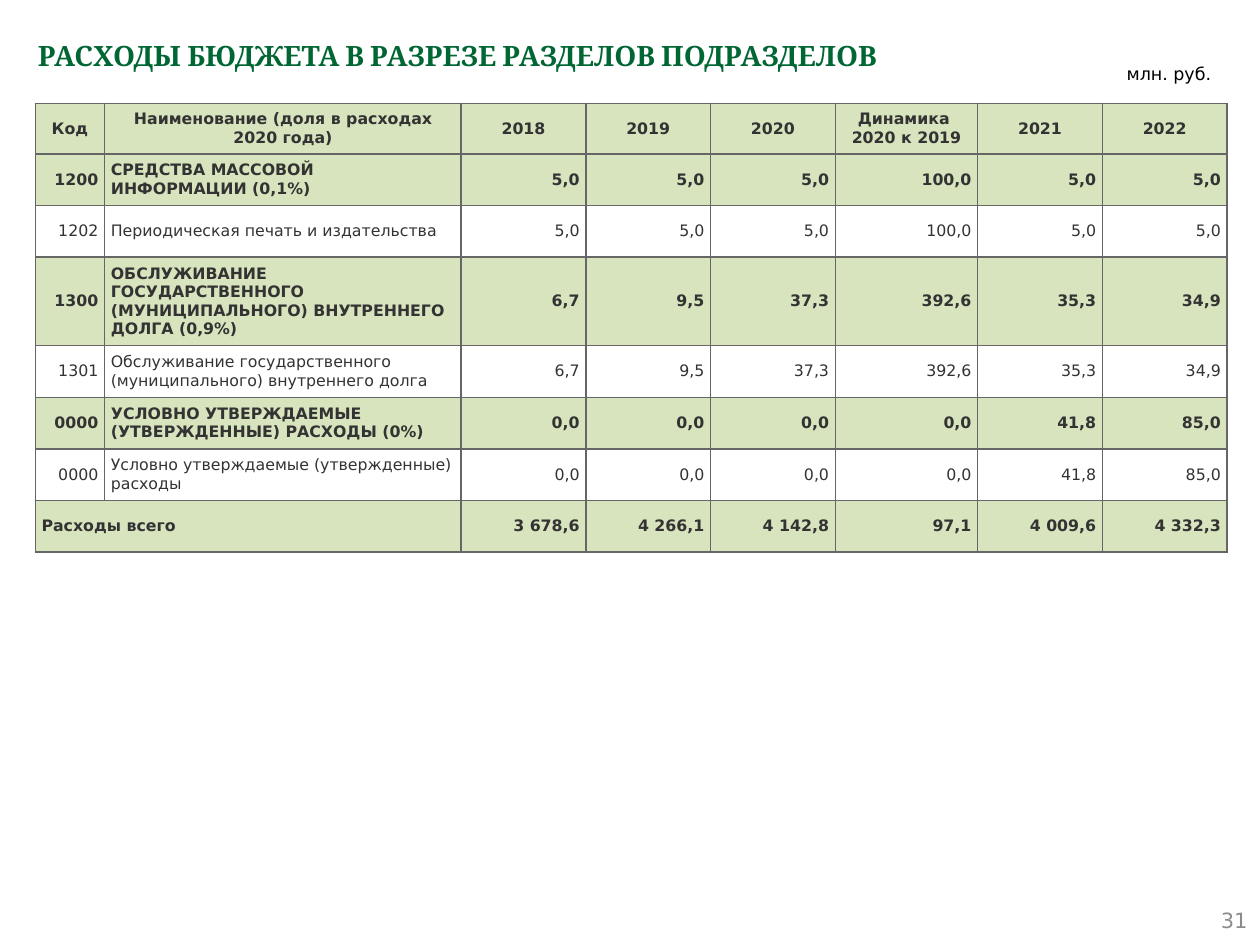
from typing import NamedTuple

from lxml.etree import SubElement
from pptx import Presentation
from pptx.dml.color import RGBColor
from pptx.enum.shapes import MSO_SHAPE
from pptx.enum.text import MSO_ANCHOR, PP_ALIGN
from pptx.oxml.ns import qn
from pptx.util import Inches, Pt

SANS = "DejaVu Sans"
GREEN, GREY = "D7E4BD", "666666"
WIDTHS = [0.55, 2.83, 0.99, 0.99, 0.99, 1.13, 0.99, 0.99]
HEAD_H, ROW_H = 0.3, 0.41


class Row(NamedTuple):
    code: str
    name: str
    values: str
    bold: bool = False


HEAD = ["Код", "Наименование (доля в расходах 2020 года)", "2018", "2019", "2020",
        "Динамика \n2020 к 2019", "2021", "2022"]
ROWS = [
    Row("1200", "СРЕДСТВА МАССОВОЙ ИНФОРМАЦИИ (0,1%)",
        "5,0|5,0|5,0|100,0|5,0|5,0", True),
    Row("1202", "Периодическая печать и издательства",
        "5,0|5,0|5,0|100,0|5,0|5,0"),
    Row("1300", "ОБСЛУЖИВАНИЕ ГОСУДАРСТВЕННОГО (МУНИЦИПАЛЬНОГО) ВНУТРЕННЕГО ДОЛГА (0,9%)",
        "6,7|9,5|37,3|392,6|35,3|34,9", True),
    Row("1301", "Обслуживание государственного (муниципального) внутреннего долга",
        "6,7|9,5|37,3|392,6|35,3|34,9"),
    Row("0000", "УСЛОВНО УТВЕРЖДАЕМЫЕ (УТВЕРЖДЕННЫЕ) РАСХОДЫ (0%)",
        "0,0|0,0|0,0|0,0|41,8|85,0", True),
    Row("0000", "Условно утверждаемые (утвержденные) расходы",
        "0,0|0,0|0,0|0,0|41,8|85,0"),
    Row("Расходы всего", "", "3 678,6|4 266,1|4 142,8|97,1|4 009,6|4 332,3", True),
]


def color(code: str) -> RGBColor:
    return RGBColor.from_string(code)


def write(frame, text: str, size: float, ink: str, align=PP_ALIGN.LEFT,
          bold: bool = False, face: str = SANS) -> None:
    frame.text = text
    for para in frame.paragraphs:
        para.alignment = align
        font = para.font
        font.name, font.size, font.bold = face, Pt(size), bold
        font.color.rgb = color(ink)


def border(cell) -> None:
    props = cell._tc.get_or_add_tcPr()
    for spot, side in enumerate(("lnL", "lnR", "lnT", "lnB")):
        line = SubElement(props, qn(f"a:{side}"), w=str(Pt(1)))
        fill = SubElement(line, qn("a:solidFill"))
        SubElement(fill, qn("a:srgbClr"), val=GREY)
        props.insert(spot, line)  # borders must come before the fill


def style(cell, text: str, align, bold: bool) -> None:
    """Fill one table cell; bold rows are shaded."""
    cell.margin_left = cell.margin_right = Inches(0.05)
    cell.margin_top = cell.margin_bottom = Inches(0.05)
    cell.vertical_anchor = MSO_ANCHOR.MIDDLE
    write(cell.text_frame, text, 9, "333333", align, bold)
    if bold:
        cell.fill.solid()
        cell.fill.fore_color.rgb = color(GREEN)
    else:
        cell.fill.background()
    border(cell)


def add_grid(slide) -> None:
    count = len(ROWS) + 1
    grid = slide.shapes.add_table(
        count, len(WIDTHS), Inches(0.28), Inches(0.82),
        Inches(sum(WIDTHS)), Inches(HEAD_H + ROW_H * len(ROWS))).table
    grid.first_row = grid.horz_banding = False
    for col, width in zip(grid.columns, WIDTHS):
        col.width = Inches(width)
    for num, line in enumerate(grid.rows):
        line.height = Inches(ROW_H if num else HEAD_H)
    for col, text in enumerate(HEAD):
        style(grid.cell(0, col), text, PP_ALIGN.CENTER, True)
    for num, row in enumerate(ROWS, 1):
        texts = [row.code, row.name, *row.values.split("|")]
        for col, text in enumerate(texts):
            left = col == 1 or (col == 0 and not row.name)
            align = PP_ALIGN.LEFT if left else PP_ALIGN.RIGHT
            style(grid.cell(num, col), text, align, row.bold)
    last = count - 1
    grid.cell(last, 0).merge(grid.cell(last, 1))


def add_title(slide) -> None:
    title = slide.shapes.title
    title.left, title.top = Inches(0.2), Inches(0.2)
    title.width, title.height = Inches(9.61), Inches(0.79)
    frame = title.text_frame
    frame.vertical_anchor = MSO_ANCHOR.TOP
    write(frame, "РАСХОДЫ БЮДЖЕТА В РАЗРЕЗЕ РАЗДЕЛОВ ПОДРАЗДЕЛОВ", 16, "006633",
          bold=True, face="Cambria")
    frame.paragraphs[0].line_spacing = 1.2


def add_unit(slide) -> None:
    unit = slide.shapes.add_shape(MSO_SHAPE.PENTAGON, Inches(8.47), Inches(0.48),
                                  Inches(1.24), Inches(0.21))
    unit.adjustments[0] = 0
    unit.shadow.inherit = False
    unit.fill.background()
    unit.line.fill.background()
    unit.text_frame.vertical_anchor = MSO_ANCHOR.MIDDLE
    write(unit.text_frame, "млн. руб.", 10, "000000", PP_ALIGN.RIGHT)


def add_number(slide) -> None:
    box = slide.shapes.add_textbox(Inches(7.67), Inches(7.1), Inches(2.33), Inches(0.4))
    frame = box.text_frame
    frame.word_wrap = True
    frame.vertical_anchor = MSO_ANCHOR.MIDDLE
    write(frame, "31", 12, "8C8C8C", PP_ALIGN.RIGHT)


def main() -> None:
    deck = Presentation()
    deck.slide_width, deck.slide_height = Inches(10), Inches(7.5)
    slide = deck.slides.add_slide(deck.slide_layouts[5])
    add_title(slide)
    add_number(slide)
    add_grid(slide)
    add_unit(slide)
    deck.save("out.pptx")


if __name__ == "__main__":
    main()
